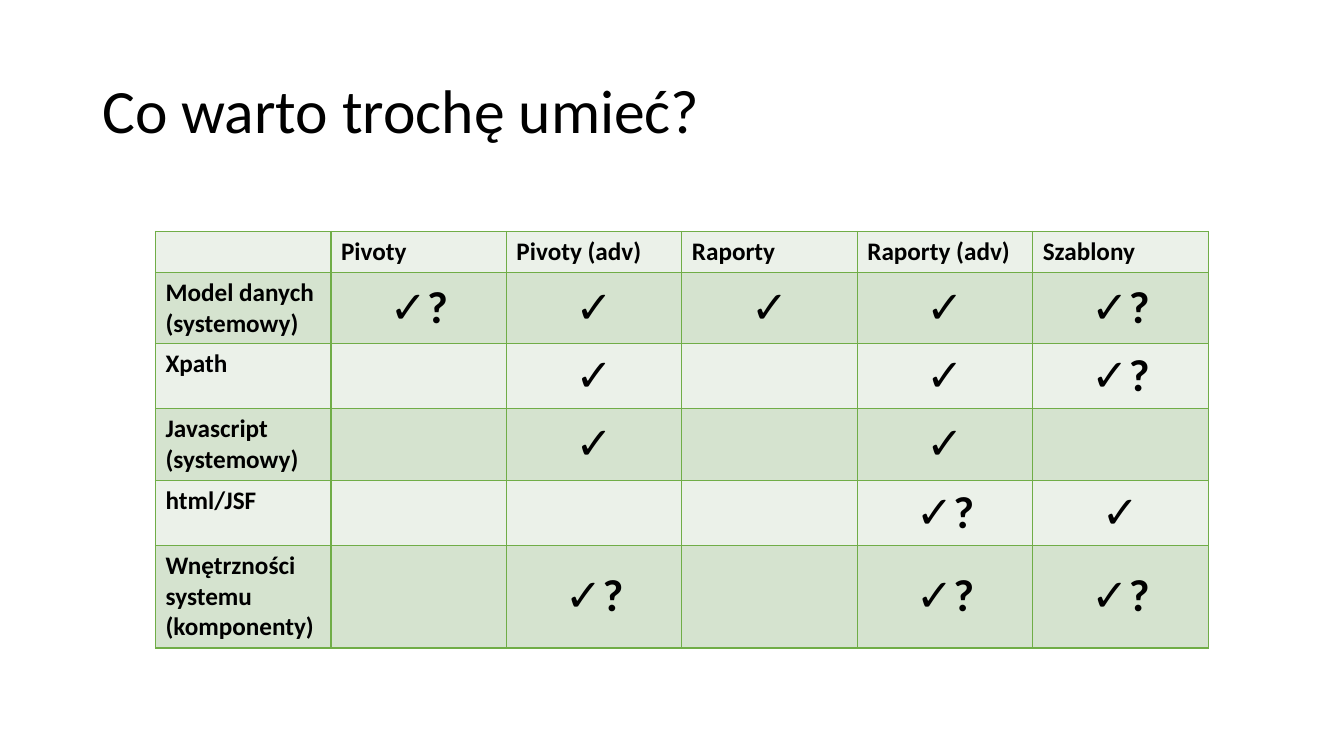
from dataclasses import dataclass

from lxml import etree
from pptx import Presentation
from pptx.dml.color import RGBColor
from pptx.enum.text import MSO_ANCHOR, PP_ALIGN
from pptx.oxml.ns import qn
from pptx.util import Cm, Pt

TOP, MIDDLE = MSO_ANCHOR.TOP, MSO_ANCHOR.MIDDLE
LEFT, CENTER = PP_ALIGN.LEFT, PP_ALIGN.CENTER


@dataclass(frozen=True)
class Theme:
    font: str = "Calibri"
    ink: str = "000000"
    border: str = "70AD47"
    bands: tuple = ("EBF1E9", "D5E3CF")
    title_size: int = 44
    label_size: int = 18
    mark_size: int = 32
    border_width: int = 1


THEME = Theme()

TITLE = "Co warto trochę umieć?"
TOOLS = ["Pivoty", "Pivoty (adv)", "Raporty", "Raporty (adv)", "Szablony"]
SKILLS = [
    ("Model danych (systemowy)", ["✓?", "✓", "✓", "✓", "✓?"]),
    ("Xpath", ["", "✓", "", "✓", "✓?"]),
    ("Javascript (systemowy)", ["", "✓", "", "✓", ""]),
    ("html/JSF", ["", "", "", "✓?", "✓"]),
    ("Wnętrzności systemu (komponenty)", ["", "✓?", "", "✓?", "✓?"]),
]
ROW_HEIGHTS = [1.03, 1.8, 1.64, 1.8, 1.64, 2.59]  # cm


def add_run(paragraph, text, size, bold=False):
    run = paragraph.add_run()
    run.text = text
    run.font.name = THEME.font
    run.font.size = Pt(size)
    run.font.bold = bold
    run.font.color.rgb = RGBColor.from_string(THEME.ink)


def add_borders(cell):
    properties = cell._tc.get_or_add_tcPr()
    for position, side in enumerate(("a:lnL", "a:lnR", "a:lnT", "a:lnB")):
        line = etree.Element(qn(side), w=str(Pt(THEME.border_width)))
        fill = etree.SubElement(line, qn("a:solidFill"))
        etree.SubElement(fill, qn("a:srgbClr"), val=THEME.border)
        properties.insert(position, line)  # lines must precede the fill


def fill_cell(cell, text, band, is_mark):
    cell.fill.solid()
    cell.fill.fore_color.rgb = RGBColor.from_string(band)
    add_borders(cell)
    if text:
        cell.vertical_anchor = MIDDLE if is_mark else TOP
        paragraph = cell.text_frame.paragraphs[0]
        paragraph.alignment = CENTER if is_mark else LEFT
        size = THEME.mark_size if is_mark else THEME.label_size
        add_run(paragraph, text, size, bold=True)


def add_title(slide, left, top, width, height):
    heading = slide.shapes.add_textbox(left, top, width, height).text_frame
    heading.word_wrap = True
    heading.vertical_anchor = MIDDLE
    heading.paragraphs[0].line_spacing = 0.9
    add_run(heading.paragraphs[0], TITLE, THEME.title_size)


def add_skill_matrix(slide, left, top, width):
    rows = [["", *TOOLS]] + [[skill, *marks] for skill, marks in SKILLS]
    matrix = slide.shapes.add_table(
        len(rows), len(rows[0]), left, top, width, Cm(sum(ROW_HEIGHTS))).table
    matrix.first_row = False
    matrix.horz_banding = False
    for r, row in enumerate(rows):
        matrix.rows[r].height = Cm(ROW_HEIGHTS[r])
        band = THEME.bands[r % len(THEME.bands)]
        for c, text in enumerate(row):
            fill_cell(matrix.cell(r, c), text, band, is_mark=r > 0 and c > 0)


def main():
    deck = Presentation()
    deck.slide_width, deck.slide_height = Cm(33.87), Cm(19.05)
    slide = deck.slides.add_slide(deck.slide_layouts[6])
    add_title(slide, Cm(2.33), Cm(1.01), Cm(29.21), Cm(3.68))
    add_skill_matrix(slide, Cm(3.92), Cm(5.83), Cm(26.53))
    deck.save("out.pptx")


if __name__ == "__main__":
    main()
